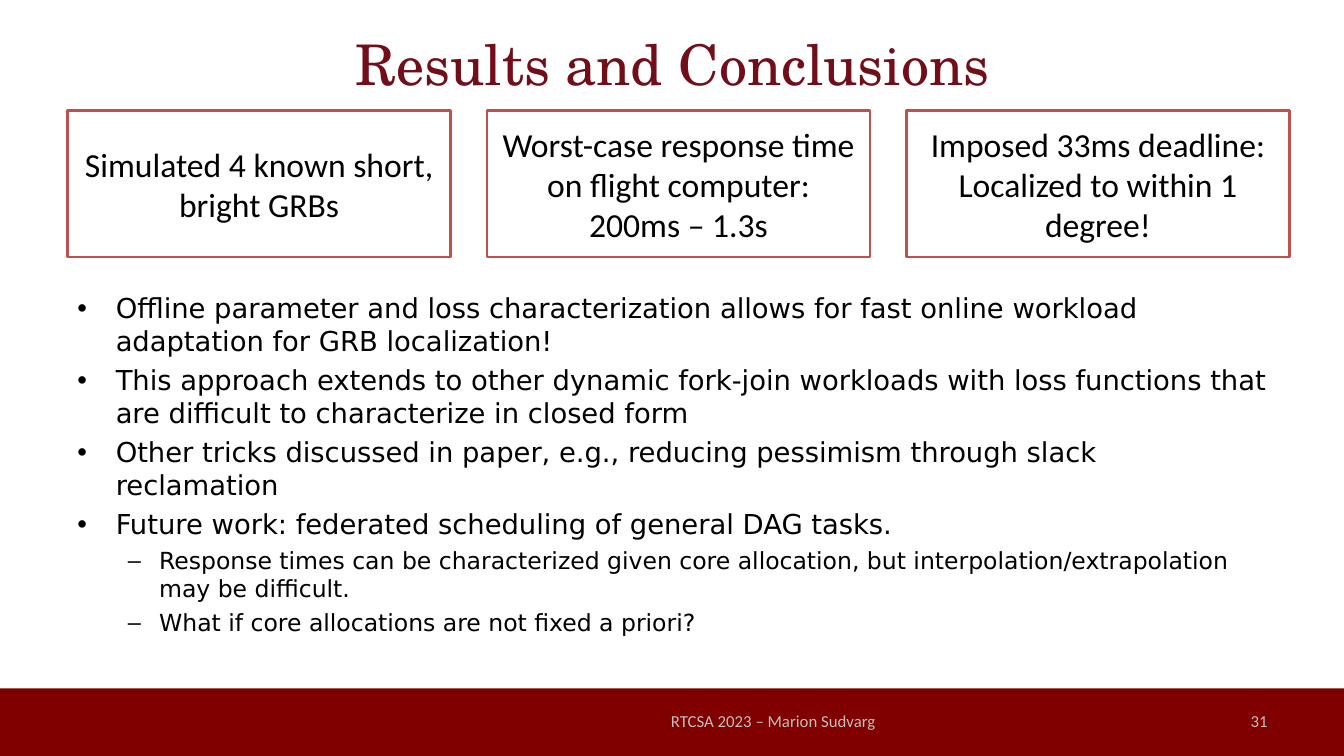
from lxml import etree
from pptx import Presentation
from pptx.dml.color import RGBColor
from pptx.enum.shapes import MSO_SHAPE
from pptx.enum.text import MSO_ANCHOR, PP_ALIGN
from pptx.oxml.ns import qn
from pptx.util import Inches, Pt

RECT = MSO_SHAPE.RECTANGLE
TOP, MIDDLE = MSO_ANCHOR.TOP, MSO_ANCHOR.MIDDLE
LEFT, CENTER, RIGHT = PP_ALIGN.LEFT, PP_ALIGN.CENTER, PP_ALIGN.RIGHT
COLORS = {"band": "800000", "title": "720D1A", "text": "000000",
          "footer": "BFBFBF", "box": "FFFFFF", "border": "C0504D"}


def add_box(x, y, w, h, fill=None):
    """Add a filled rectangle, or a text box when no fill is given."""
    pos = [Inches(v) for v in (x, y, w, h)]
    if fill is None:
        return slide.shapes.add_textbox(*pos)
    sp = slide.shapes.add_shape(RECT, *pos)
    sp.shadow.inherit = False
    sp.fill.solid()
    sp.fill.fore_color.rgb = RGBColor.from_string(COLORS[fill])
    sp.line.fill.background()
    return sp


def write(sp, lines, font, size, color, align=CENTER, anchor=MIDDLE):
    """Put one paragraph per line into a shape and format its runs."""
    tf = sp.text_frame
    tf.word_wrap = True
    tf.vertical_anchor = anchor
    tf.text = "\n".join(lines)
    for p in tf.paragraphs:
        p.alignment = align
        for r in p.runs:
            r.font.name = font
            r.font.size = Pt(size)
            r.font.color.rgb = RGBColor.from_string(COLORS[color])


prs = Presentation()
prs.slide_width, prs.slide_height = Inches(13.33), Inches(7.5)
slide = prs.slides.add_slide(prs.slide_layouts[6])

# Footer band and title
add_box(0, 6.83, 13.33, 0.67, "band")
write(add_box(0.67, 0, 12, 1.25), ["Results and Conclusions"],
      "TeX Gyre Schola", 40, "title")

# Bulleted conclusions: (level, text)
conclusions = [
    (0, "Offline parameter and loss characterization allows for fast online "
        "workload adaptation for GRB localization!"),
    (0, "This approach extends to other dynamic fork-join workloads with loss "
        "functions that are difficult to characterize in closed form"),
    (0, "Other tricks discussed in paper, e.g., reducing pessimism through "
        "slack reclamation"),
    (0, "Future work: federated scheduling of general DAG tasks."),
    (1, "Response times can be characterized given core allocation, but "
        "interpolation/extrapolation may be difficult."),
    (1, "What if core allocations are not fixed a priori?"),
]
# Per level: bullet, left margin, hanging indent, size, space before
levels = [("•", 0.38, -0.38, 19.6, 4.5), ("–", 0.81, -0.31, 16.8, 4)]
body = add_box(0.67, 2.84, 12, 3.86)
write(body, [text for _, text in conclusions], "DejaVu Sans", 19.6, "text",
      LEFT, TOP)
for i, (p, (level, _)) in enumerate(zip(body.text_frame.paragraphs, conclusions)):
    char, margin, indent, size, before = levels[level]
    p.level = level
    p.space_before = Pt(before if i else 0)
    p.runs[0].font.size = Pt(size)
    pPr = p._p.get_or_add_pPr()
    pPr.set("marL", str(Inches(margin)))
    pPr.set("indent", str(Inches(indent)))
    etree.SubElement(pPr, qn("a:buFont")).set("typeface", "Arial")
    etree.SubElement(pPr, qn("a:buChar")).set("char", char)

# Slide number and footer
write(add_box(9.56, 6.95, 3.11, 0.4), ["31"], "Calibri", 12, "footer", RIGHT)
write(add_box(5.56, 6.95, 4.22, 0.4), ["RTCSA 2023 – Marion Sudvarg"],
      "Calibri", 12, "footer")

# Result boxes
results = [
    ["Simulated 4 known short, bright GRBs"],
    ["Worst-case response time on flight computer:", "200ms – 1.3s"],
    ["Imposed 33ms deadline:", "Localized to within 1 degree!"],
]
for i, lines in enumerate(results):
    sp = add_box(0.67 + i * 4.16, 1.1, 3.8, 1.45, "box")
    sp.line.color.rgb = RGBColor.from_string(COLORS["border"])
    sp.line.width = Pt(2)
    write(sp, lines, "Calibri", 24, "text")

prs.save("out.pptx")
